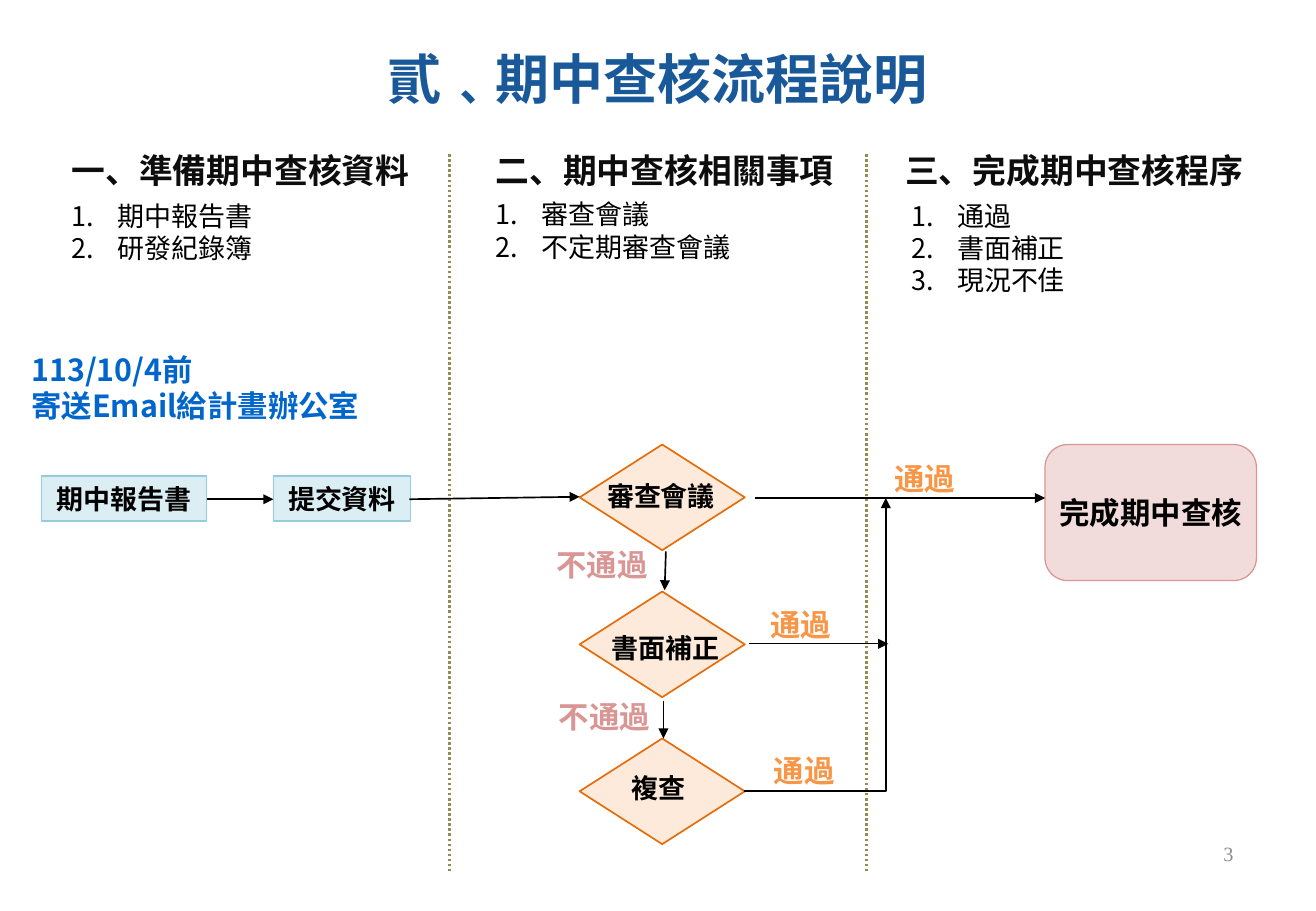
from pptx import Presentation
from pptx.dml.color import RGBColor
from pptx.enum.dml import MSO_LINE as Dash
from pptx.enum.shapes import MSO_CONNECTOR as Link, MSO_SHAPE as Kind
from pptx.enum.text import MSO_ANCHOR as Anchor, PP_ALIGN as Align
from pptx.oxml.ns import qn
from pptx.util import Inches, Pt
from lxml.etree import SubElement as Sub

WIDTH, HEIGHT = 10.83, 7.5
CELL = 0.1
SANS = "Noto Sans CJK SC"
COLORS = {
    "title": "195999", "head": "0D0D0D", "ink": "000000", "note": "0066CC",
    "pass": "F79646", "fail": "D99694", "page": "8C8C8C", "rule": "948A54",
    "step": "DBEEF4", "edge": "93CDDD", "test": "FDEADA", "rim": "E46C0A",
    "done": "F2DCDB",
}


def color(name):
    return RGBColor.from_string(COLORS[name])


def grid(*cells):
    return [Inches(cell * CELL) for cell in cells]


def style(frame, size, tint, bold=True, align=Align.LEFT, face=SANS):
    for para in frame.paragraphs:
        para.alignment = align
        for run in para.runs:
            font = run.font
            font.size, font.bold, font.name = Pt(size), bold, face
            font.color.rgb = color(tint)
            Sub(font._element, qn("a:ea"), typeface=SANS)


def label(slide, box, text, size, tint, wrap=True, **looks):
    frame = slide.shapes.add_textbox(*grid(*box)).text_frame
    frame.text = text
    frame.word_wrap = wrap
    style(frame, size, tint, **looks)
    return frame


def listing(slide, box, items):
    frame = label(slide, box, "\n".join(items), 16, "ink", bold=False)
    for para in frame.paragraphs:
        props = para._p.get_or_add_pPr()
        props.set("marL", str(Inches(0.38)))
        props.set("indent", str(-Inches(0.38)))
        Sub(props, qn("a:buFont"), typeface=SANS)
        Sub(props, qn("a:buAutoNum"), type="arabicPeriod")


def block(slide, kind, box, fill, edge, width, text="", size=16):
    shape = slide.shapes.add_shape(kind, *grid(*box))
    shape.shadow.inherit = False
    shape.fill.solid()
    shape.fill.fore_color.rgb = color(fill)
    shape.line.color.rgb = color(edge)
    shape.line.width = Pt(width)
    frame = shape.text_frame
    frame.text = text
    frame.word_wrap = False
    frame.vertical_anchor = Anchor.MIDDLE
    style(frame, size, "ink", align=Align.CENTER)


def line(slide, ends, tint="ink", width=1, kind=Link.STRAIGHT):
    link = slide.shapes.add_connector(kind, *grid(*ends))
    link.line.color.rgb = color(tint)
    link.line.width = Pt(width)
    Sub(link._element.spPr, qn("a:effectLst"))
    return link


def arrow(slide, ends, width=1, kind=Link.STRAIGHT):
    link = line(slide, ends, width=width, kind=kind)
    Sub(link.line._get_or_add_ln(), qn("a:tailEnd"), type="triangle")
    return link


def title(slide):
    shape = slide.shapes.title
    shape.left, shape.top, shape.width, shape.height = grid(4.9, 4, 98.4, 4.8)
    frame = shape.text_frame
    frame.text = "貳﹑期中查核流程說明"
    frame.margin_left = frame.margin_right = 0
    frame.margin_top = frame.margin_bottom = 0
    frame.word_wrap = False
    frame.vertical_anchor = Anchor.MIDDLE
    style(frame, 32, "title", align=Align.CENTER, face="Arial")


def columns(slide):
    for col, head in ((4.9, "一、準備期中查核資料"),
                      (39.8, "二、期中查核相關事項"),
                      (73.5, "三、完成期中查核程序")):
        label(slide, (col, 11.8, 29.9, 4.4), head, 20, "head")
    for col, row, items in (
            (4.9, 15.9, ("期中報告書", "研發紀錄簿")),
            (39.8, 15.8, ("審查會議", "不定期審查會議")),
            (74, 15.9, ("通過", "書面補正", "現況不佳"))):
        listing(slide, (col, row, 30, 9), items)
    for col in (37, 71.3):
        rule = line(slide, (col, 12.7, col, 71.8), "rule", 1.5)
        rule.line.dash_style = Dash.ROUND_DOT


def flow(slide):
    for col, wide, text in ((3.4, 13.6, "期中報告書"), (22.5, 11.3, "提交資料")):
        block(slide, Kind.RECTANGLE, (col, 39.2, wide, 3.7),
              "step", "edge", 0.75, text)
    block(slide, Kind.FLOWCHART_ALTERNATE_PROCESS, (86, 36.6, 17.4, 11.2),
          "done", "fail", 0.75, "完成期中查核", 18)
    tests = ((48.9, 39, 11, "審查會議"), (48.3, 51.5, 13, "書面補正"),
             (50.9, 63, 6.5, "複查"))
    for step, (col, row, wide, text) in enumerate(tests):
        block(slide, Kind.DIAMOND, (47.7, 36.6 + 12.1 * step, 13.6, 8.7),
              "test", "rim", 1)
        label(slide, (col, row, wide, 3.7), text, 16, "ink", False,
              align=Align.CENTER)
    for ends in ((17, 41.1, 22.5, 41.1), (33.7, 41.1, 47.7, 40.9),
                 (62.1, 41, 86, 41), (54.8, 45.4, 54.7, 48.6),
                 (54.6, 57.7, 54.6, 60.8)):
        arrow(slide, ends)
    arrow(slide, (61.6, 53, 73.1, 53), 0.75)
    back = arrow(slide, (61.2, 65.1, 72.9, 41), kind=Link.ELBOW)
    back._element.spPr.find(qn("a:prstGeom")).set("prst", "bentConnector2")


def notes(slide):
    for col, row in ((72.6, 37.4), (62.4, 49.4), (62.7, 61.4)):
        label(slide, (col, row, 7.1, 4), "通過", 18, "pass", False)
    for col, row in ((44.8, 44.5), (45, 57)):
        label(slide, (col, row, 9.6, 4), "不通過", 18, "fail", False)
    label(slide, (1.6, 28.4, 32.2, 7.1),
          "113/10/4前\n寄送Email給計畫辦公室", 18, "note")
    page = label(slide, (78.1, 68.3, 24.4, 4), "3", 12, "page", bold=False,
                 align=Align.RIGHT, face="Times New Roman")
    page.vertical_anchor = Anchor.MIDDLE


def main():
    deck = Presentation()
    deck.slide_width, deck.slide_height = Inches(WIDTH), Inches(HEIGHT)
    slide = deck.slides.add_slide(deck.slide_layouts[5])
    title(slide)
    columns(slide)
    flow(slide)
    notes(slide)
    deck.save("out.pptx")


if __name__ == "__main__":
    main()
